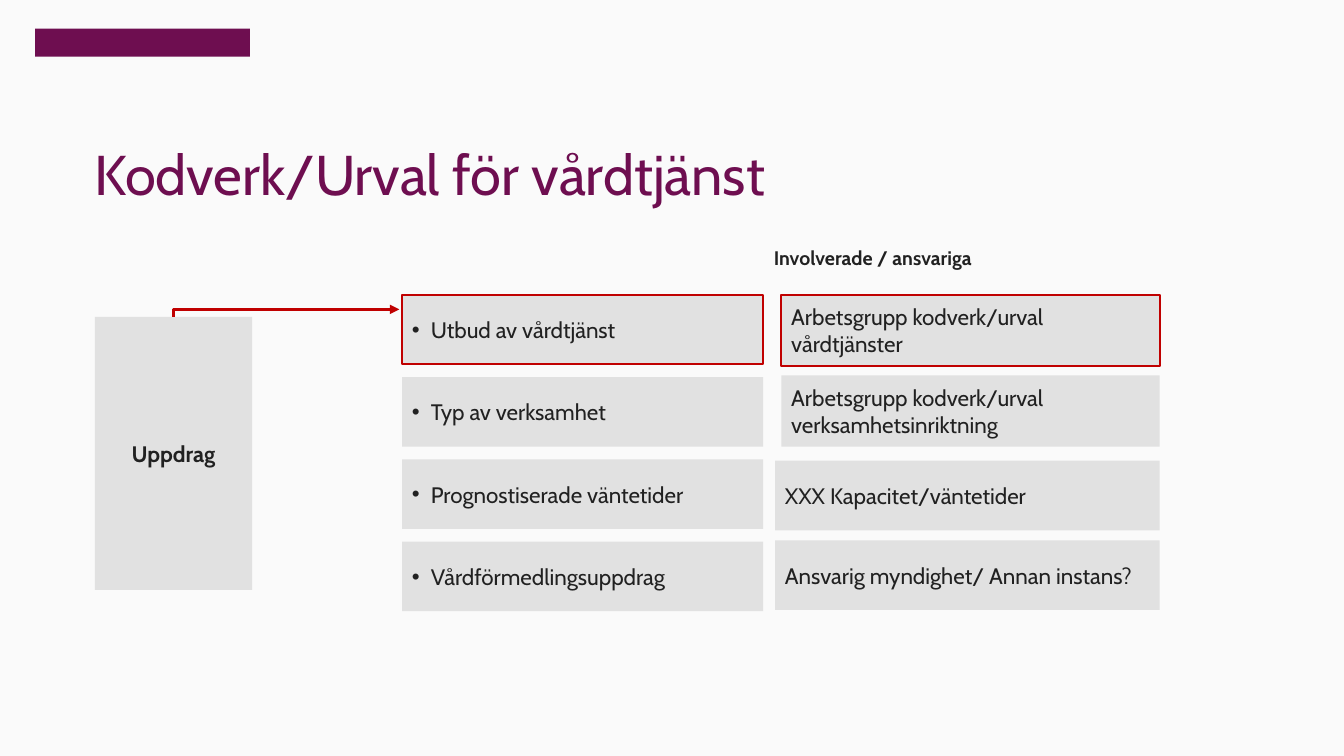
from pptx import Presentation
from pptx.dml.color import RGBColor
from pptx.enum.shapes import MSO_CONNECTOR, MSO_SHAPE
from pptx.enum.text import MSO_ANCHOR, PP_ALIGN
from pptx.oxml.ns import qn
from pptx.util import Pt
from lxml import etree

RECTANGLE = MSO_SHAPE.RECTANGLE
ELBOW = MSO_CONNECTOR.ELBOW
MIDDLE, BOTTOM = MSO_ANCHOR.MIDDLE, MSO_ANCHOR.BOTTOM
LEFT, CENTER = PP_ALIGN.LEFT, PP_ALIGN.CENTER

BACKGROUND = RGBColor(0xFA, 0xFA, 0xFA)
PLUM = RGBColor(0x6E, 0x0E, 0x50)
GREY = RGBColor(0xE1, 0xE1, 0xE1)
INK = RGBColor(0x21, 0x21, 0x21)
RED = RGBColor(0xC0, 0x00, 0x00)
FONT = "Cabin"

TASKS = ["Utbud av vårdtjänst", "Typ av verksamhet",
         "Prognostiserade väntetider", "Vårdförmedlingsuppdrag"]
WORK_GROUPS = ["Arbetsgrupp kodverk/urval vårdtjänster",
               "Arbetsgrupp kodverk/urval verksamhetsinriktning"]
OTHER_PARTIES = ["XXX Kapacitet/väntetider",
                 "Ansvarig myndighet/ Annan instans?"]


def write(shape, text, size=16, color=INK, bold=False, align=LEFT,
          anchor=MIDDLE, bullet=False, inset=None, spacing=None):
    frame = shape.text_frame
    frame.word_wrap = True
    frame.vertical_anchor = anchor
    if inset is not None:
        frame.margin_left = frame.margin_right = Pt(inset)
        frame.margin_top = frame.margin_bottom = Pt(inset)
    para = frame.paragraphs[0]
    para.alignment = align
    if spacing:
        para.line_spacing = spacing
    if bullet:
        properties = para._p.get_or_add_pPr()
        indent = Pt(13.5)
        properties.set("marL", str(indent))
        properties.set("indent", str(-indent))
        etree.SubElement(properties, qn("a:buFont"), typeface="Arial")
        etree.SubElement(properties, qn("a:buChar"), char="•")
    span = para.add_run()
    span.text = text
    span.font.name = FONT
    span.font.size = Pt(size)
    span.font.bold = bold
    span.font.color.rgb = color


def add_text(page, box, text, **style):
    write(page.shapes.add_textbox(*map(Pt, box)), text, **style)


def add_box(page, box, fill=GREY, outline=None):
    shape = page.shapes.add_shape(RECTANGLE, *map(Pt, box))
    shape.shadow.inherit = False
    shape.fill.solid()
    shape.fill.fore_color.rgb = fill
    if outline:
        shape.line.color.rgb = outline
        shape.line.width = Pt(1.5)
    else:
        shape.line.fill.background()
    return shape


def add_stack(page, box, step, texts, highlight_first=False, bullet=False):
    """Place one box per text, each a step below the one before."""
    left, top, width, height = box
    for row, text in enumerate(texts):
        outline = RED if highlight_first and row == 0 else None
        shape = add_box(page, (left, top + row * step, width, height),
                        outline=outline)
        write(shape, text, bullet=bullet)


def add_bent_arrow(page, start, end):
    """Draw an arrow that goes up from start, then right to end."""
    (start_x, start_y), (end_x, end_y) = start, end
    center_x, center_y = (start_x + end_x) / 2, (start_y + end_y) / 2
    half_rise, half_run = (start_y - end_y) / 2, (end_x - start_x) / 2
    arrow = page.shapes.add_connector(
        ELBOW, Pt(center_x + half_rise), Pt(center_y + half_run),
        Pt(center_x - half_rise), Pt(center_y - half_run))
    arrow.line.color.rgb = RED
    arrow.line.width = Pt(2.25)
    properties = arrow._element.spPr
    properties.find(qn("a:xfrm")).set("rot", str(90 * 60000))
    properties.find(qn("a:prstGeom")).set("prst", "bentConnector2")
    line = properties.find(qn("a:ln"))
    etree.SubElement(line, qn("a:tailEnd"), type="triangle")
    etree.SubElement(properties, qn("a:effectLst"))


def add_assignment(page, box, target):
    """Draw the assignment box and the arrow from its top to the target."""
    left, top, width, height = box
    write(add_box(page, box), "Uppdrag", bold=True, align=CENTER)
    add_bent_arrow(page, (left + width / 2, top), target)


def add_responsible(page, box):
    left, top, width, height = box
    add_text(page, (left - 8, top - 62, 239, 47.5), "Involverade / ansvariga",
             size=14, bold=True, anchor=BOTTOM)
    add_stack(page, (left + 4.5, top, width - 4.5, 51), 57.6, WORK_GROUPS,
              highlight_first=True)
    add_stack(page, (left, top + height - 106.6, width, 49.7), 56.9,
              OTHER_PARTIES)


def build_page(page):
    page.background.fill.solid()
    page.background.fill.fore_color.rgb = BACKGROUND
    add_box(page, (25, 20.5, 153.5, 20), fill=PLUM)
    add_text(page, (67.7, 104.4, 825, 44), "Kodverk/Urval för vårdtjänst",
             size=40, color=PLUM, anchor=BOTTOM, inset=0, spacing=0.9)
    add_assignment(page, (67.7, 226.3, 112.5, 195), (285.2, 221))
    add_stack(page, (287.2, 210.5, 258, 49.7), 58.8, TASKS,
              highlight_first=True, bullet=True)
    add_responsible(page, (553.6, 210.5, 274.8, 225.2))


def main():
    deck = Presentation()
    deck.slide_width, deck.slide_height = Pt(960), Pt(540)
    build_page(deck.slides.add_slide(deck.slide_layouts[6]))
    deck.save("out.pptx")


if __name__ == "__main__":
    main()
